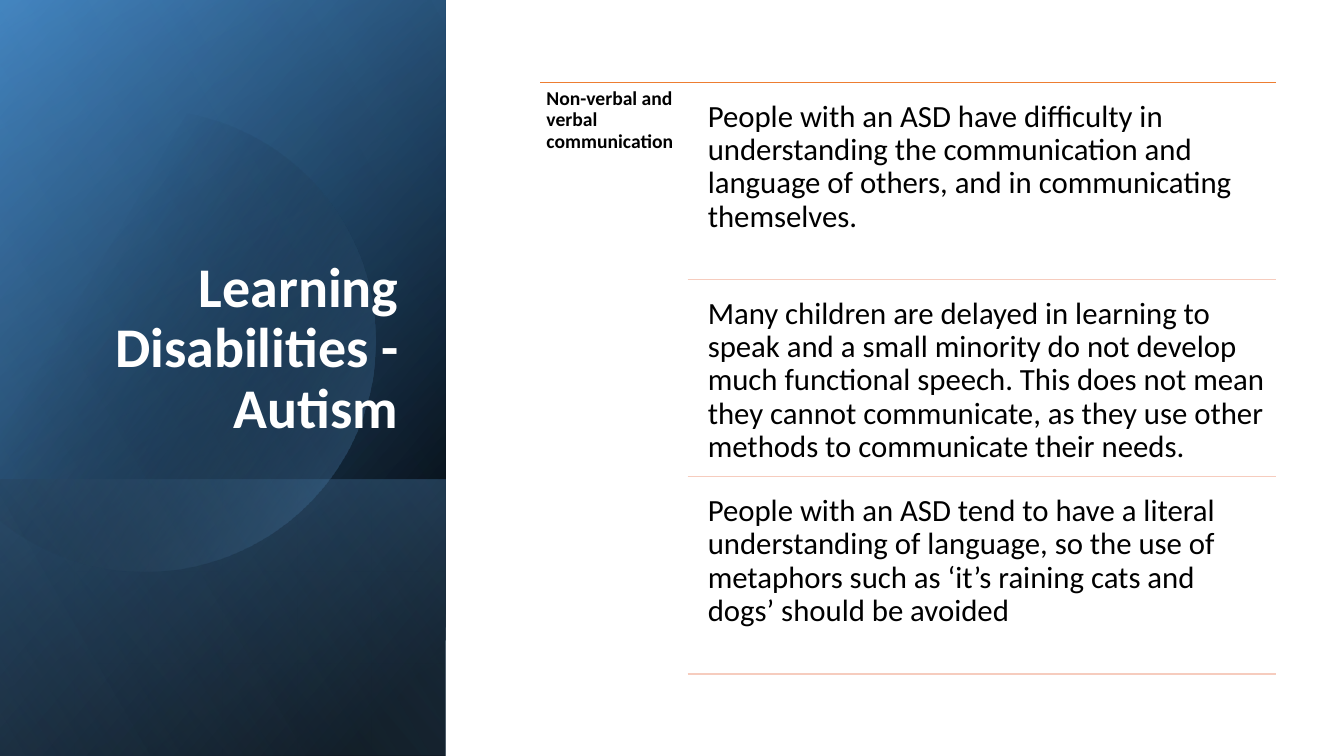
"""Build the slide on autism and communication: a blue title panel beside three ruled statements."""
from math import acos, cos, degrees, radians, sin

from lxml.etree import SubElement
from pptx import Presentation
from pptx.dml.color import RGBColor
from pptx.enum.shapes import MSO_CONNECTOR, MSO_SHAPE
from pptx.enum.text import MSO_ANCHOR, PP_ALIGN
from pptx.oxml import parse_xml
from pptx.oxml.ns import nsdecls, qn
from pptx.util import Inches, Pt

WHITE = RGBColor(0xFF, 0xFF, 0xFF)
BLACK = RGBColor(0x00, 0x00, 0x00)
ORANGE = RGBColor(0xED, 0x7D, 0x31)
PEACH = RGBColor(0xF6, 0xCC, 0xBE)
NIGHT_BLUE = RGBColor(0x2E, 0x75, 0xB6)
SKY_BLUE = RGBColor(0x5B, 0x9B, 0xD5)
PALE_BLUE = RGBColor(0x9D, 0xC3, 0xE6)

SLIDE_W, SLIDE_H = 13.33, 7.5
PANEL_W = 4.42
HEADING_X, STATEMENT_X, RIGHT_X = 5.36, 6.82, 12.66
TOP_Y, ROW_H = 0.82, 1.955

STATEMENTS = [
    "People with an ASD have difficulty in understanding the communication and "
    "language of others, and in communicating themselves.",
    "Many children are delayed in learning to speak and a small minority do not "
    "develop much functional speech. This does not mean they cannot communicate, "
    "as they use other methods to communicate their needs.",
    "People with an ASD tend to have a literal understanding of language, so the "
    "use of metaphors such as ‘it’s raining cats and dogs’ should be avoided",
]


def shade(shape, stops, angle):
    """Give a shape a linear gradient of (position, colour, opacity) stops, with no line or shadow."""
    gradient = parse_xml(
        f'<a:gradFill {nsdecls("a")} rotWithShape="1"><a:gsLst/>'
        f'<a:lin ang="{angle * 60000}" scaled="0"/></a:gradFill>'
    )
    for position, color, opacity in stops:
        stop = SubElement(gradient[0], qn("a:gs"), pos=str(position * 1000))
        tint = SubElement(stop, qn("a:srgbClr"), val=str(color))
        SubElement(tint, qn("a:alpha"), val=str(opacity * 1000))
    shape._element.spPr.insert(2, gradient)
    shape.line.fill.background()
    shape.shadow.inherit = False


def write(x, y, width, height, words, size, inset, color=BLACK, bold=False):
    """Place one wrapped paragraph and return its frame."""
    frame = slide.shapes.add_textbox(Inches(x), Inches(y), Inches(width), Inches(height)).text_frame
    frame.word_wrap = True
    frame.margin_left = frame.margin_right = Inches(inset)
    frame.margin_top = frame.margin_bottom = Inches(min(inset, 0.09))
    paragraph = frame.paragraphs[0]
    paragraph.line_spacing = 0.9
    run = paragraph.add_run()
    run.text = words
    run.font.name = "Calibri"
    run.font.size = Pt(size)
    run.font.bold = bold
    run.font.color.rgb = color
    return frame


deck = Presentation()
deck.slide_width, deck.slide_height = Inches(SLIDE_W), Inches(SLIDE_H)
slide = deck.slides.add_slide(deck.slide_layouts[6])

FOOT_H = 2.74
circle_glow = [(29, BLACK, 0), (100, SKY_BLUE, 43)]
panel_layers = [
    (SLIDE_H, [(8, BLACK, 100), (100, NIGHT_BLUE, 100)], 50),
    (SLIDE_H, [(0, BLACK, 0), (99, SKY_BLUE, 46)], 30),
    (FOOT_H, [(2, SKY_BLUE, 29), (100, BLACK, 30)], 130),
    (None, circle_glow, 30),
    (SLIDE_H, [(0, BLACK, 0), (99, PALE_BLUE, 11)], 120),
]
CENTER_X, CENTER_Y, RADIUS = 1.43, 3.38, 2.29
reach = degrees(acos(-CENTER_X / RADIUS))
STEPS = 120
arc = []
for step in range(STEPS + 1):
    turn = radians(reach * (2 * step / STEPS - 1))
    arc.append((Inches(CENTER_X + RADIUS * cos(turn)), Inches(CENTER_Y + RADIUS * sin(turn))))

for length, stops, angle in panel_layers:
    if length is None:
        outline = slide.shapes.build_freeform(*arc[0])
        outline.add_line_segments(arc[1:], close=True)
        layer = outline.convert_to_shape()
    else:
        layer = slide.shapes.add_shape(
            MSO_SHAPE.RECTANGLE,
            Inches((PANEL_W - length) / 2), Inches(SLIDE_H - (length + PANEL_W) / 2),
            Inches(length), Inches(PANEL_W),
        )
        layer.rotation = 90
        layer._element.spPr.xfrm.set("flipH", "1")
    shade(layer, stops, angle)

title = write(0.64, 1.84, 3.41, 2.62, "Learning Disabilities - Autism", 40, 0.1, WHITE, True)
title.vertical_anchor = MSO_ANCHOR.BOTTOM
title.paragraphs[0].alignment = PP_ALIGN.RIGHT

write(HEADING_X, TOP_Y, STATEMENT_X - HEADING_X, 3 * ROW_H,
      "Non-verbal and verbal communication", 14, 0.06, bold=True)
for row, statement in enumerate(STATEMENTS):
    write(STATEMENT_X + 0.11, TOP_Y + 0.09 + row * ROW_H, 5.72, 1.86, statement, 22, 0.09)

for row in range(len(STATEMENTS) + 1):
    start_x, color, weight = (STATEMENT_X, PEACH, 1) if row else (HEADING_X, ORANGE, 0.5)
    y = Inches(TOP_Y + row * ROW_H)
    rule = slide.shapes.add_connector(MSO_CONNECTOR.STRAIGHT, Inches(start_x), y, Inches(RIGHT_X), y)
    rule.line.color.rgb = color
    rule.line.width = Pt(weight)
    SubElement(rule._element.spPr, qn("a:effectLst"))

deck.save("out.pptx")
